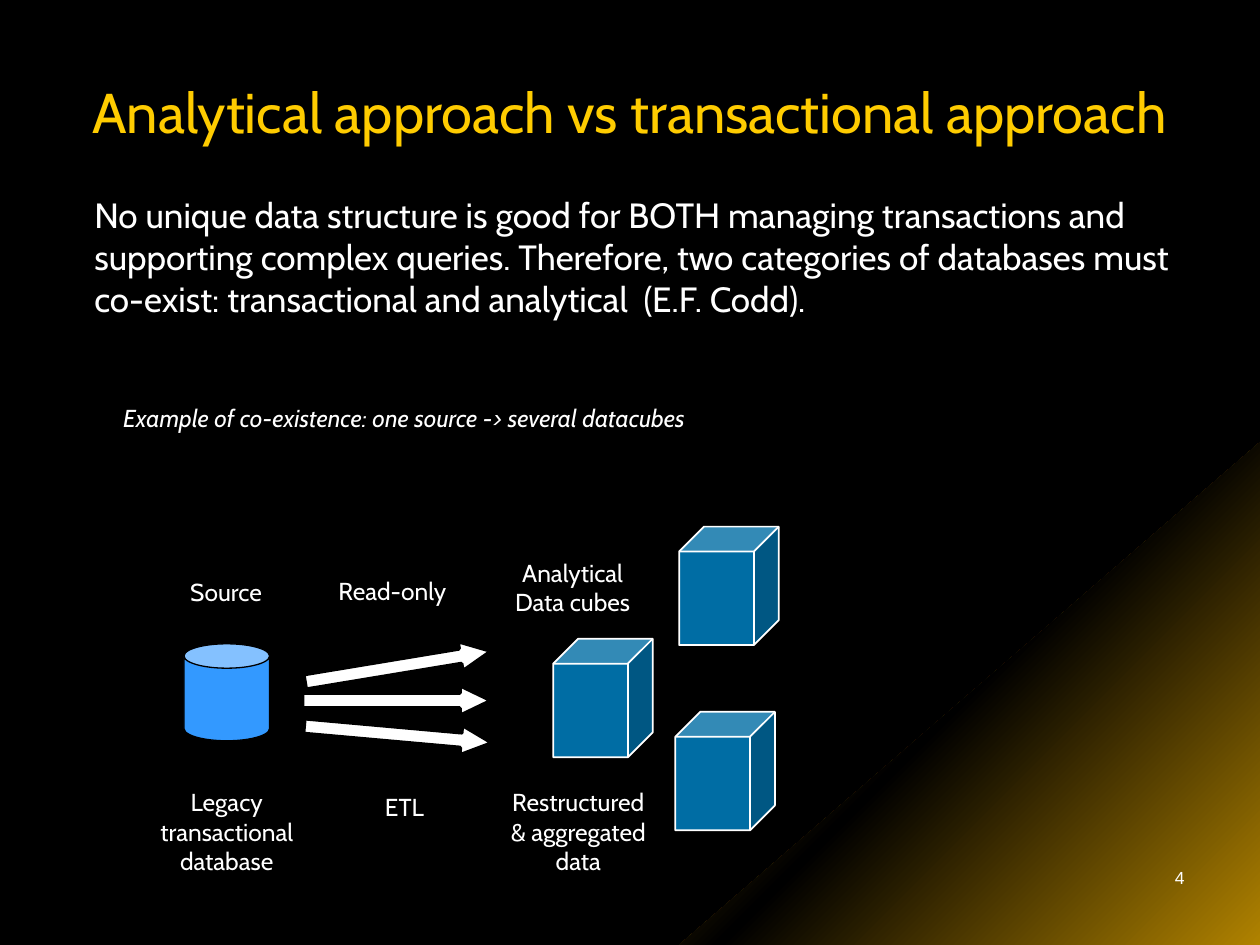
"""Build the slide comparing analytical and transactional databases."""
import copy
from dataclasses import dataclass

import pptx
import pptx.dml.color
import pptx.enum.shapes
import pptx.enum.text
import pptx.util

Inches = pptx.util.Inches
Align = pptx.enum.text.PP_ALIGN
Preset = pptx.enum.shapes.MSO_SHAPE


def color(value: str) -> pptx.dml.color.RGBColor:
    """Turn a hexadecimal string into a colour."""
    return pptx.dml.color.RGBColor.from_string(value)


@dataclass(frozen=True)
class Theme:
    """Colours, fonts and type sizes of the slide."""
    black: str = "000000"
    white: str = "FFFFFF"
    title: str = "FFCC00"
    gold: str = "B08200"
    source: str = "3399FF"
    cube: str = "006DA4"
    font: str = "Cabin"
    number_font: str = "Arial"
    title_size: int = 32
    body_size: int = 20
    label_size: int = 14
    number_size: int = 10


THEME = Theme()


@dataclass(frozen=True)
class Box:
    """A position and size in inches."""
    left: float
    top: float
    width: float
    height: float

    def lengths(self) -> tuple:
        """Return the four values as lengths."""
        return tuple(Inches(v) for v in (self.left, self.top, self.width, self.height))


@dataclass(frozen=True)
class Text:
    """A text box with one paragraph per entry."""
    box: Box
    paragraphs: tuple
    size: int = THEME.label_size
    align: Align = Align.CENTER
    font: str = THEME.font
    italic: bool = False
    wrap: bool = False


@dataclass(frozen=True)
class Figure:
    """A filled and outlined preset shape."""
    preset: Preset
    box: Box
    fill: str
    line: str
    line_width: float
    adjustments: tuple
    rotation: float = 0


TEXTS = (
    Text(Box(0.65, 1.49, 8.84, 1.1), (
        "No unique data structure is good for BOTH managing transactions and "
        "supporting complex queries. Therefore, two categories of databases must "
        "co-exist: transactional and analytical  (E.F. Codd).",),
        THEME.body_size, Align.LEFT, wrap=True),
    Text(Box(0.88, 3.15, 8.03, 0.34),
         ("Example of co-existence: one source -> several datacubes",),
         align=Align.LEFT, italic=True, wrap=True),
    Text(Box(1.4, 4.53, 0.79, 0.34), ("Source",)),
    Text(Box(2.58, 4.52, 1.07, 0.34), ("Read-only",)),
    Text(Box(3.96, 4.38, 1.17, 0.57), ("Analytical\nData cubes",)),
    Text(Box(1.15, 6.2, 1.3, 0.81), ("Legacy", "transactional", "database")),
    Text(Box(2.95, 6.24, 0.52, 0.34), ("ETL",)),
    Text(Box(3.9, 6.2, 1.38, 0.81), ("Restructured\n& aggregated", "data")),
    Text(Box(7.17, 6.83, 2.33, 0.5), ("4",), THEME.number_size, Align.RIGHT,
         THEME.number_font, wrap=True),
)


def cube(left: float, top: float) -> Figure:
    """Describe one data cube."""
    return Figure(Preset.CUBE, Box(left, top, 0.79, 0.94), THEME.cube, THEME.white, 1, (0.25,))


def arrow(left: float, top: float, rotation: float) -> Figure:
    """Describe one arrow from the source to the cubes."""
    return Figure(Preset.RIGHT_ARROW, Box(left, top, 1.5, 0.24), THEME.white,
                  THEME.black, 2.25, (0.5, 1.04), rotation)


FIGURES = (
    Figure(Preset.CAN, Box(1.46, 5.11, 0.68, 0.77), THEME.source, THEME.black, 0.75, (0.285,)),
    arrow(2.41, 5.17, -9.4),
    arrow(2.4, 5.44, 0),
    arrow(2.41, 5.71, 5.1),
    cube(4.39, 5.07),
    cube(5.39, 4.18),
    cube(5.36, 5.65),
)


def draw_corner(slide) -> None:
    """Draw the triangle that fades from black to gold."""
    builder = slide.shapes.build_freeform(Inches(10), Inches(7.5))
    builder.add_line_segments([(Inches(5.39), Inches(7.5)), (Inches(10), Inches(3.51))])
    shape = builder.convert_to_shape()
    shape.shadow.inherit = False
    shape.line.fill.background()
    shape.fill.gradient()
    shape.fill.gradient_angle = 315
    first, last = shape.fill.gradient_stops
    first.position, last.position = 0, 1
    first.color.rgb = color(THEME.black)
    stop_list = shape.fill._fill._gradFill.gsLst
    middle = copy.deepcopy(stop_list[0])
    middle.set("pos", "50000")
    stop_list.insert(1, middle)
    first.color.rgb = last.color.rgb = color(THEME.gold)


def draw_title(slide, text: str) -> None:
    """Fill and place the title placeholder."""
    title = slide.shapes.title
    title.left, title.top, title.width, title.height = Box(0.5, 0.3, 9, 1.16).lengths()
    frame = title.text_frame
    frame.text = text
    frame.vertical_anchor = pptx.enum.text.MSO_ANCHOR.MIDDLE
    format_paragraph(frame.paragraphs[0], THEME.title_size, THEME.title, Align.CENTER)


def format_paragraph(paragraph, size: int, hue: str, align: Align,
                     font: str = THEME.font, italic: bool = False) -> None:
    """Set the font and alignment of a paragraph."""
    paragraph.alignment = align
    paragraph.font.name = font
    paragraph.font.size = pptx.util.Pt(size)
    paragraph.font.italic = italic
    paragraph.font.color.rgb = color(hue)


def draw_text(slide, text: Text) -> None:
    """Draw one text box."""
    frame = slide.shapes.add_textbox(*text.box.lengths()).text_frame
    frame.word_wrap = text.wrap
    for index, words in enumerate(text.paragraphs):
        paragraph = frame.add_paragraph() if index else frame.paragraphs[0]
        paragraph.text = words
        format_paragraph(paragraph, text.size, THEME.white, text.align, text.font, text.italic)


def draw_figure(slide, figure: Figure) -> None:
    """Draw one preset shape."""
    shape = slide.shapes.add_shape(figure.preset, *figure.box.lengths())
    shape.shadow.inherit = False
    shape.rotation = figure.rotation
    for index, value in enumerate(figure.adjustments):
        shape.adjustments[index] = value
    shape.fill.solid()
    shape.fill.fore_color.rgb = color(figure.fill)
    shape.line.color.rgb = color(figure.line)
    shape.line.width = pptx.util.Pt(figure.line_width)


def main() -> None:
    """Build and save the presentation."""
    presentation = pptx.Presentation()
    presentation.slide_width, presentation.slide_height = Inches(10), Inches(7.5)
    slide = presentation.slides.add_slide(presentation.slide_layouts.get_by_name("Title Only"))
    slide.background.fill.solid()
    slide.background.fill.fore_color.rgb = color(THEME.black)
    draw_corner(slide)
    draw_title(slide, "Analytical approach vs transactional approach")
    for figure in FIGURES:
        draw_figure(slide, figure)
    for text in TEXTS:
        draw_text(slide, text)
    presentation.save("out.pptx")


if __name__ == "__main__":
    main()
